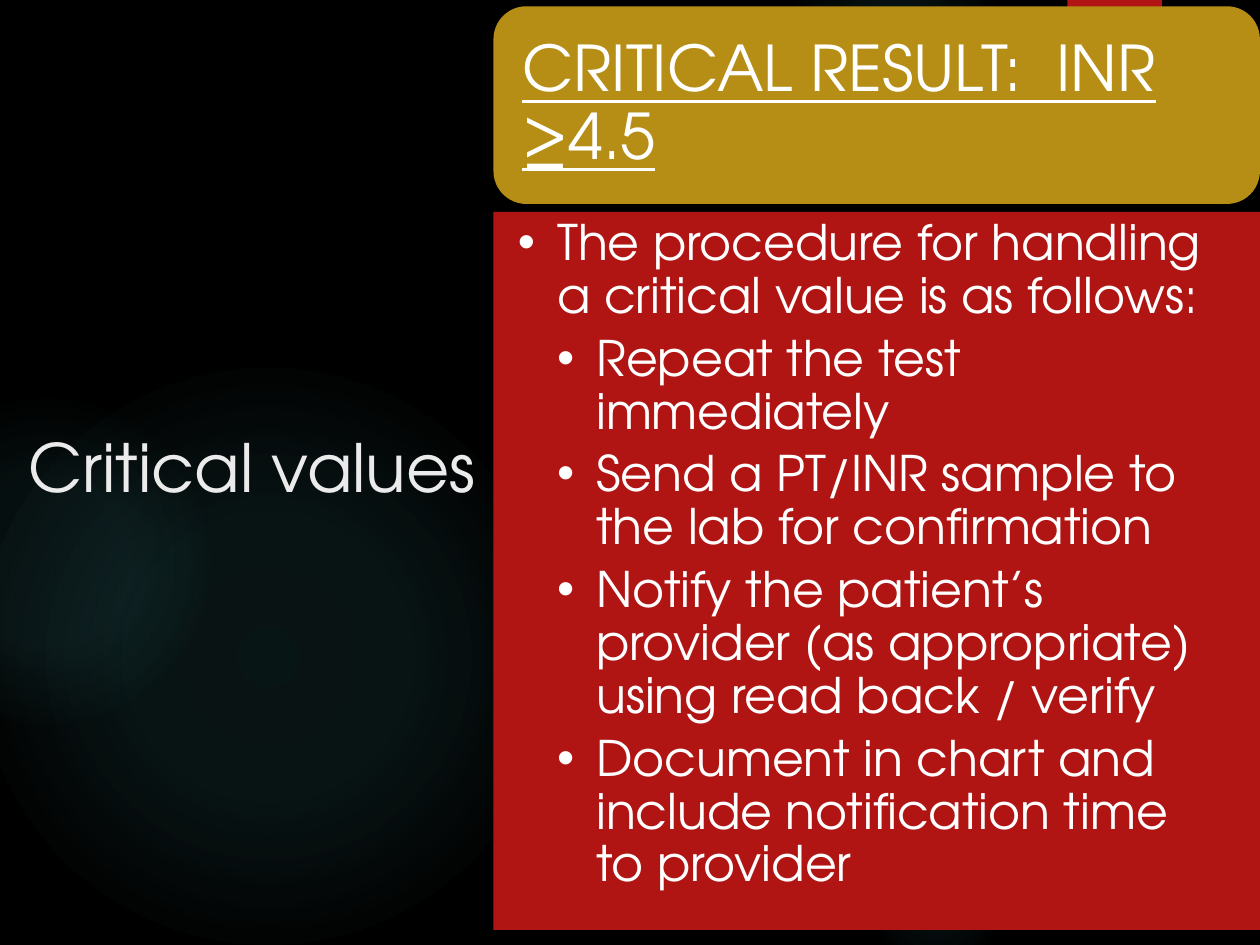
from pptx import Presentation
from pptx.dml.color import RGBColor as RGB
from pptx.enum.shapes import MSO_SHAPE as Shape
from pptx.enum.text import MSO_ANCHOR as Anchor, MSO_AUTO_SIZE as Fit, PP_ALIGN as Align
from pptx.oxml import parse_xml
from pptx.oxml.ns import nsdecls
from pptx.util import Pt

BLACK = RGB(0x00, 0x00, 0x00)
WHITE = RGB(0xFF, 0xFF, 0xFF)
PALE = RGB(0xEB, 0xEB, 0xEB)
GOLD = RGB(0xB6, 0x8E, 0x15)
RED = RGB(0xB0, 0x15, 0x13)
TEAL = RGB(0x50, 0xB9, 0xC1)
FONT = "TeX Gyre Adventor"
STEP = 22.4  # list indent per level

# Left, top, size, then (position, opacity) stops in percent
GLOWS = [
    (448, -36, 126, [(0, 14), (36, 7), (73, 0)]),
    (496, 480, 78, [(0, 9), (36, 5), (66, 0)]),
    (-12, 210, 330, [(0, 11), (36, 10), (75, 0)]),
    (-66, 228, 186, [(0, 8), (36, 8), (72, 0)]),
]
STEPS = [
    (0, "The procedure for handling a critical value is as follows:"),
    (1, "Repeat the test immediately"),
    (1, "Send a PT/INR sample to the lab for confirmation"),
    (1, "Notify the patient’s provider (as appropriate) using read back / verify"),
    (1, "Document in chart and include notification time to provider"),
]


def place(item, box):
    item.left, item.top, item.width, item.height = (Pt(v) for v in box)


def inset(frame, left, top, right, bottom):
    frame.word_wrap = True
    frame.auto_size = Fit.NONE
    frame.margin_left, frame.margin_top = Pt(left), Pt(top)
    frame.margin_right, frame.margin_bottom = Pt(right), Pt(bottom)


def style(para, size, color):
    para.font.name = FONT
    para.font.size = Pt(size)
    para.font.color.rgb = color


def add_block(slide, kind, box, color):
    block = slide.shapes.add_shape(kind, *(Pt(v) for v in box))
    block.shadow.inherit = False
    block.line.fill.background()
    block.fill.solid()
    block.fill.fore_color.rgb = color
    return block


def add_glow(slide, left, top, size, stops):
    glow = add_block(slide, Shape.OVAL, (left, top, size, size), TEAL)
    marks = "".join(
        f'<a:gs pos="{pos * 1000}"><a:srgbClr val="{TEAL}">'
        f'<a:alpha val="{alpha * 1000}"/></a:srgbClr></a:gs>'
        for pos, alpha in stops)
    grad = parse_xml(
        f'<a:gradFill {nsdecls("a")}><a:gsLst>{marks}</a:gsLst><a:path path="circle">'
        '<a:fillToRect l="50000" t="50000" r="50000" b="50000"/></a:path></a:gradFill>')
    props = glow.element.spPr
    props.replace(props.find("{*}solidFill"), grad)


def add_title(slide, box):
    title = slide.shapes.title
    slide.shapes.element.append(title.element)  # bring to front
    place(title, box)
    frame = title.text_frame
    inset(frame, 7.2, 3.6, 7.2, 3.6)
    frame.vertical_anchor = Anchor.TOP
    frame.text = "Critical values"
    para = frame.paragraphs[0]
    para.alignment = Align.RIGHT
    style(para, 38, PALE)


def add_banner(slide, box):
    banner = add_block(slide, Shape.ROUNDED_RECTANGLE, box, GOLD)
    frame = banner.text_frame
    inset(frame, 11, 16, 16, 16)
    frame.vertical_anchor = Anchor.MIDDLE
    frame.text = "CRITICAL RESULT:  INR ≥4.5"
    para = frame.paragraphs[0]
    para.alignment = Align.LEFT
    para.line_spacing = 0.9
    para.font.underline = True
    style(para, 36, WHITE)


def add_steps(slide, box):
    body = slide.placeholders[1]
    slide.shapes.element.append(body.element)  # bring to front
    place(body, box)
    body.fill.solid()
    body.fill.fore_color.rgb = RED
    frame = body.text_frame
    inset(frame, 14, 3.6, 20, 3.6)
    frame.vertical_anchor = Anchor.TOP
    frame.text = "\n".join(text for _, text in STEPS)
    for para, (level, _) in zip(frame.paragraphs, STEPS):
        para.level = level
        para.line_spacing = 0.9
        para.space_before, para.space_after = Pt(0), Pt(5.6)
        style(para, 28, WHITE)
        # Round bullet with a hanging indent
        props = para._p.get_or_add_pPr()
        props.set("marL", str(Pt(STEP * (level + 1))))
        props.set("indent", str(-Pt(STEP)))
        bullet = parse_xml(f'<a:buChar {nsdecls("a")} char="•"/>')
        props.insert_element_before(bullet, "a:tabLst", "a:defRPr", "a:extLst")


def main():
    deck = Presentation()
    deck.slide_width, deck.slide_height = Pt(720), Pt(540)
    slide = deck.slides.add_slide(deck.slide_layouts[1])

    # Backdrop
    slide.background.fill.solid()
    slide.background.fill.fore_color.rgb = BLACK
    for glow in GLOWS:
        add_glow(slide, *glow)
    add_block(slide, Shape.RECTANGLE, (610, 0, 54, 86), RED)

    # Content
    add_title(slide, (-3, 240, 282, 216))
    add_banner(slide, (282, 3.6, 438, 113))
    add_steps(slide, (282, 121, 438, 410.4))
    deck.save("out.pptx")


if __name__ == "__main__":
    main()
